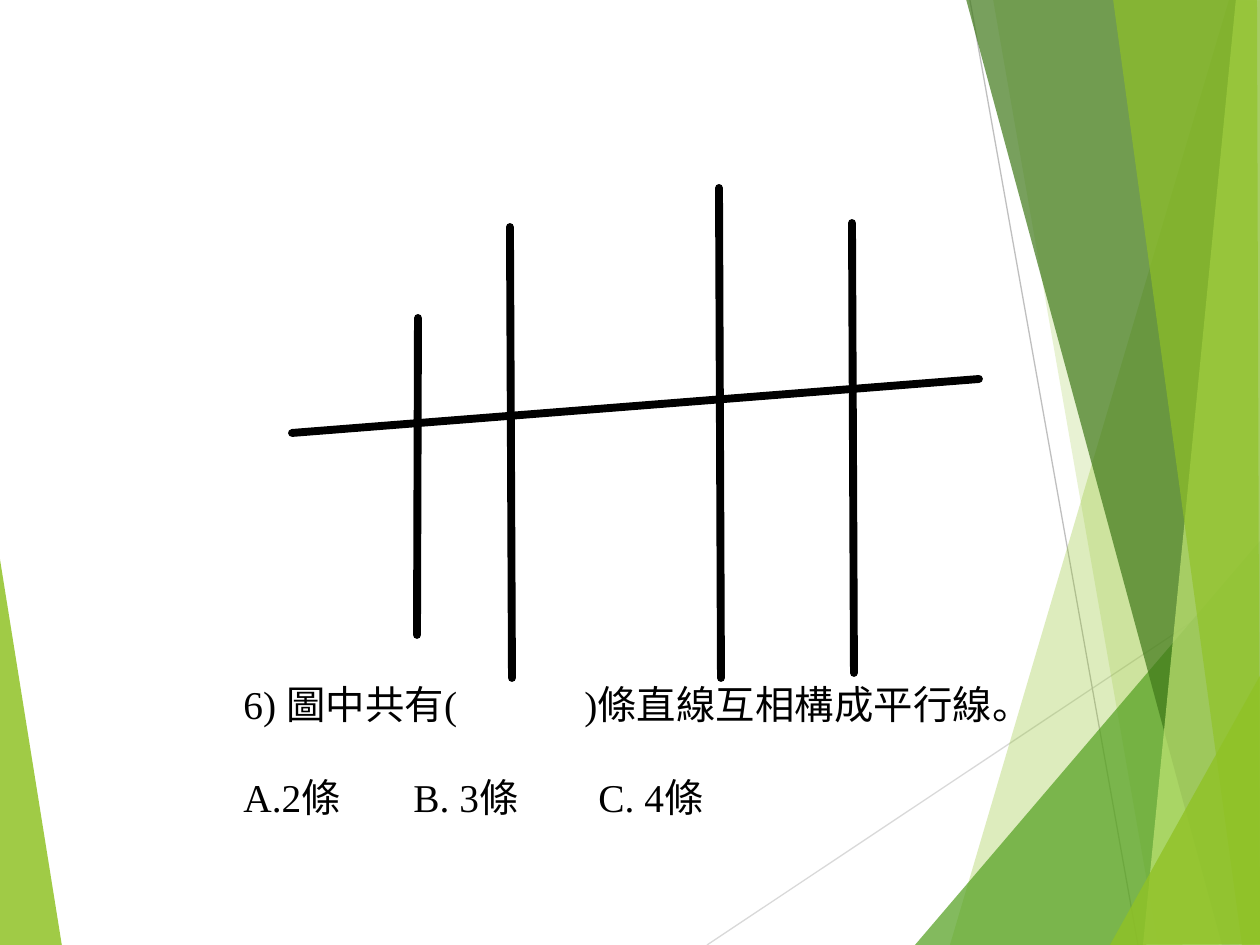
from lxml import etree
from pptx import Presentation
from pptx import util as u
from pptx.dml.color import RGBColor
from pptx.enum import shapes, text
from pptx.oxml.ns import qn

PX = 914400 / 126
SLIDE = (0, 0, 1260, 945)
FIGURE = (292, 188, 687, 490)
QUESTION = (231, 674, 839, 156)

LEFT_FACET = [("90C226", 85, [(-1, 553), (62, 946), (-1, 945)])]
RIGHT_FACETS = [
    ("90C226", 30, [(1229, 0), (950, 945), (1263, 946), (1261, 1)]),
    ("90C226", 20, [(993, -1), (1158, 945), (1261, 945), (1261, -1)]),
    ("54A021", 72, [(915, 945), (1260, 541), (1261, 945)]),
    ("3F7819", 70, [(966, -1), (1222, 945), (1261, 944), (1261, -1)]),
    ("C0E474", 70, [(1236, -1), (1143, 945), (1261, 945), (1260, -1)]),
    ("90C226", 65, [(1113, -1), (1242, 945), (1260, 945), (1257, -1)]),
    ("90C226", 80, [(1110, 945), (1261, 674), (1261, 944)]),
]
RAYS = [("D9D9D9", (707, 945), (1261, 576)), ("BFBFBF", (970, 0), (1138, 945))]
STROKES = [
    ((126, 130), (125, 447)),
    ((427, 0), (429, 490)),
    ((0, 245), (687, 191)),
    ((218, 39), (220, 490)),
    ((560, 35), (562, 485)),
]
LINES = [
    ("6) 圖中共有(\t)條直線互相構成平行線。", [341]),
    ("A.2條\tB. 3條\tC. 4條", [170, 355]),
]


def px(n):
    """Turn px into EMU."""
    return u.Emu(round(n * PX))


def paint(color, value):
    """Set a colour format from a hex string."""
    color.rgb = RGBColor.from_string(value)


def add_facet(s, box, color, alpha, points):
    """Draw one translucent polygon inside the box."""
    left, top = box[:2]
    pts = [(left + x, top + y) for x, y in points]
    fb = s.shapes.build_freeform(*pts[0], scale=PX)
    fb.add_line_segments(pts[1:], close=True)
    sp = fb.convert_to_shape()
    sp.shadow.inherit = False
    sp.line.fill.background()
    sp.fill.solid()
    paint(sp.fill.fore_color, color)
    clr = sp.fill._xPr.find(qn("a:solidFill"))[0]
    etree.SubElement(clr, qn("a:alpha")).set("val", str(alpha * 1000))


def add_line(s, box, start, end, color, width, cap="flat"):
    """Draw one straight line inside the box."""
    left, top = box[:2]
    (x1, y1), (x2, y2) = start, end
    cx = s.shapes.add_connector(
        shapes.MSO_CONNECTOR.STRAIGHT,
        px(left + x1), px(top + y1), px(left + x2), px(top + y2))
    paint(cx.line.color, color)
    cx.line.width = u.Pt(width)
    cx.line._get_or_add_ln().set("cap", cap)
    etree.SubElement(cx._element.spPr, qn("a:effectLst"))


def add_backdrop(s, box):
    """Draw the green facets and thin rays along the slide edges."""
    for facet in LEFT_FACET:
        add_facet(s, box, *facet)
    for color, start, end in RAYS:
        add_line(s, box, start, end, color, 0.75)
    for facet in RIGHT_FACETS:
        add_facet(s, box, *facet)


def add_figure(s, box):
    """Draw four upright lines crossed by a slanted one."""
    for start, end in STROKES:
        add_line(s, box, start, end, "000000", 4.5, "rnd")


def add_question(s, box):
    """Write the question and its choices, spaced by tab stops."""
    tf = s.shapes.add_textbox(*map(px, box)).text_frame
    tf.word_wrap = True
    tf.auto_size = text.MSO_AUTO_SIZE.SHAPE_TO_FIT_TEXT
    for i, (line, stops) in enumerate(LINES):
        p = tf.add_paragraph() if i else tf.paragraphs[0]
        p.text = line
        p.space_before = u.Pt(26 * i)
        tabs = etree.SubElement(p._p.get_or_add_pPr(), qn("a:tabLst"))
        for stop in stops:
            etree.SubElement(tabs, qn("a:tab"), pos=str(px(stop)), algn="l")
        for r in p.runs:
            r.font.name = "Times New Roman"
            r.font.size = u.Pt(22.5)
            paint(r.font.color, "000000")


def main():
    """Build the slide and save it."""
    prs = Presentation()
    prs.slide_width, prs.slide_height = map(px, SLIDE[2:])
    s = prs.slides.add_slide(prs.slide_layouts[6])
    add_backdrop(s, SLIDE)
    add_figure(s, FIGURE)
    add_question(s, QUESTION)
    prs.save("out.pptx")


if __name__ == "__main__":
    main()
